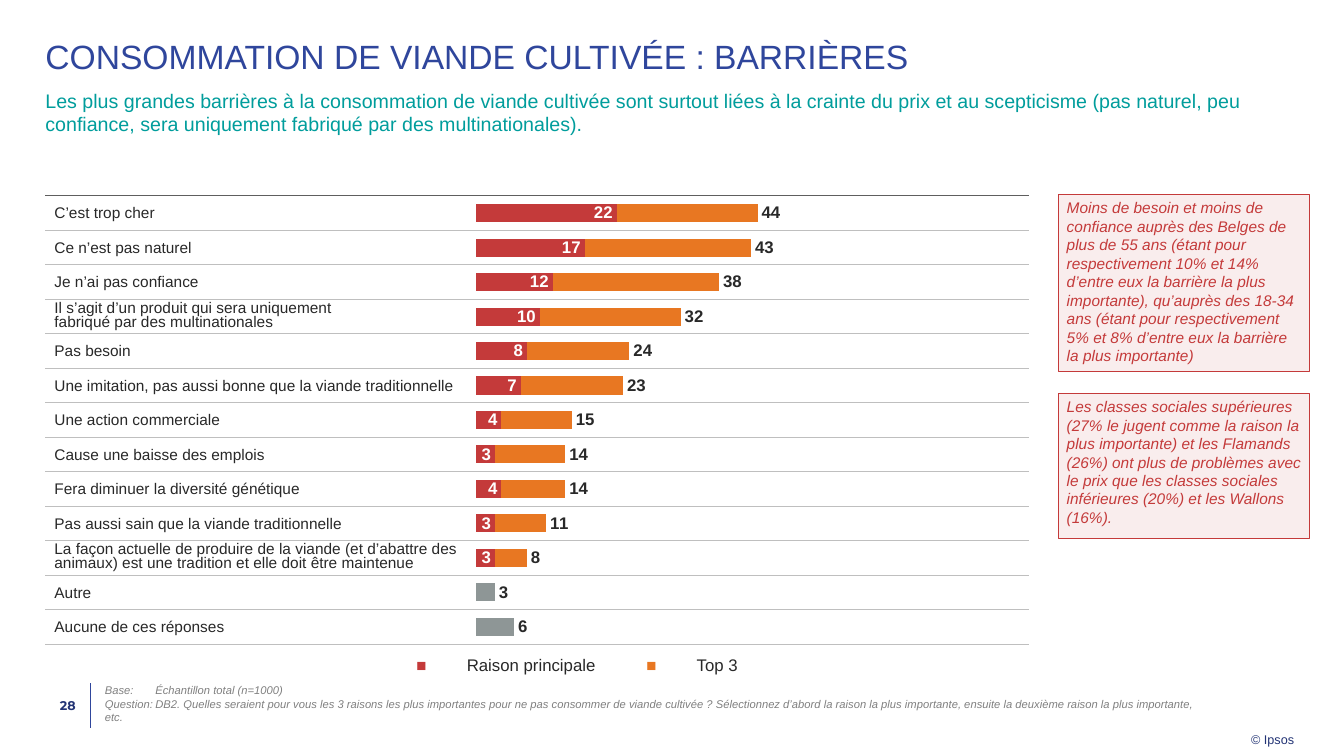
"""Build the slide on barriers to eating cultured meat."""
from dataclasses import dataclass
from typing import NamedTuple, Optional

from pptx import Presentation, util as u
from pptx.chart.data import CategoryChartData
from pptx.dml.color import RGBColor
from pptx.enum import chart as ch, shapes, text
from pptx.oxml import parse_xml
from pptx.oxml.ns import nsdecls
from pptx.oxml.xmlchemy import OxmlElement


@dataclass(frozen=True)
class Theme:
    font: str = "Arial"
    number_font: str = "Montserrat"
    blue: str = "2F469C"
    navy: str = "233475"
    teal: str = "009D9C"
    red: str = "C43A3A"
    pink: str = "F9EDED"
    orange: str = "E87722"
    ink: str = "282828"
    note_grey: str = "808080"
    bar_grey: str = "8E9696"
    rule: str = "BFBFBF"
    top_rule: str = "5E5E5E"
    white: str = "FFFFFF"
    title: float = 24
    lead: float = 14
    label: float = 12
    body: float = 11
    small: float = 9
    note: float = 8


class Box(NamedTuple):
    left: float
    top: float
    width: float
    height: float

    def emu(self) -> list:
        return [u.Inches(v) for v in self]


class Barrier(NamedTuple):
    label: str
    top3: int
    main: Optional[int] = None


class Callout(NamedTuple):
    box: Box
    text: str


class Key(NamedTuple):
    label: str
    color: str
    width: float


T = Theme()
CHART_BOX = Box(4.66, 1.94, 6.57, 4.45)
TABLE_BOX = Box(0.45, 1.94, 9.76, 4.45)
LEGEND_BOX = Box(4.09, 6.5, 3.42, 0.21)
BARRIERS = [
    Barrier("C’est trop cher", 44, 22),
    Barrier("Ce n’est pas naturel", 43, 17),
    Barrier("Je n’ai pas confiance", 38, 12),
    Barrier("Il s’agit d’un produit qui sera uniquement\nfabriqué par des multinationales", 32, 10),
    Barrier("Pas besoin", 24, 8),
    Barrier("Une imitation, pas aussi bonne que la viande traditionnelle", 23, 7),
    Barrier("Une action commerciale", 15, 4),
    Barrier("Cause une baisse des emplois", 14, 3),
    Barrier("Fera diminuer la diversité génétique", 14, 4),
    Barrier("Pas aussi sain que la viande traditionnelle", 11, 3),
    Barrier("La façon actuelle de produire de la viande (et d’abattre des animaux) "
            "est une tradition et elle doit être maintenue", 8, 3),
    Barrier("Autre", 3),
    Barrier("Aucune de ces réponses", 6),
]
CALLOUTS = [
    Callout(Box(10.5, 1.93, 2.49, 1.75),
            "Moins de besoin et moins de confiance auprès des Belges de plus de 55 ans (étant pour "
            "respectivement 10% et 14% d’entre eux la barrière la plus importante), qu’auprès des "
            "18-34 ans (étant pour respectivement 5% et 8% d’entre eux la barrière la plus importante)"),
    Callout(Box(10.5, 3.9, 2.49, 1.44),
            "Les classes sociales supérieures (27% le jugent comme la raison la plus importante) et les "
            "Flamands (26%) ont plus de problèmes avec le prix que les classes sociales inférieures "
            "(20%) et les Wallons (16%)."),
]
KEYS = [Key("Raison principale", T.red, 2.28), Key("Top 3", T.orange, 1.14)]


def rgb(color: str) -> RGBColor:
    return RGBColor.from_string(color)


def style(font, size: float, color: str, bold=False, italic=False, name=T.font) -> None:
    font.size, font.name, font.bold, font.italic = u.Pt(size), name, bold, italic
    font.color.rgb = rgb(color)


def write(tf, content: str, *, size: float, color: str, bold=False, italic=False, name=T.font,
          align=text.PP_ALIGN.LEFT, spacing=None, tab: float = 0, marker: str = "") -> None:
    for i, line in enumerate(content.split("\n")):
        p = tf.add_paragraph() if i else tf.paragraphs[0]
        pPr = p._p.get_or_add_pPr()
        pPr.set("marL", "0")
        pPr.set("indent", "0")
        pPr.append(OxmlElement("a:buNone"))
        if tab:
            pPr.append(parse_xml(f'<a:tabLst {nsdecls("a")}><a:tab pos="{u.Inches(tab)}" algn="l"/></a:tabLst>'))
        p.alignment, p.space_before = align, u.Pt(0)
        if spacing:
            p.line_spacing = spacing
        runs = [("■", marker), ("\t" + line, color)] if marker else [(line, color)]
        for words, tint in runs:
            r = p.add_run()
            r.text = words
            style(r.font, size, tint, bold, italic, name)


def frame(sp, margins: tuple, anchor=text.MSO_ANCHOR.TOP, wrap=True):
    tf = sp.text_frame
    tf.auto_size, tf.word_wrap, tf.vertical_anchor = text.MSO_AUTO_SIZE.NONE, wrap, anchor
    tf.margin_left, tf.margin_top, tf.margin_right, tf.margin_bottom = [u.Inches(m) for m in margins]
    return tf


def place(sp, box: Box):
    sp.left, sp.top, sp.width, sp.height = box.emu()
    return sp


def format_cell(cell, margins: tuple, top: Optional[tuple] = None, bottom: Optional[tuple] = None) -> None:
    cell.margin_left, cell.margin_top, cell.margin_right, cell.margin_bottom = [u.Inches(m) for m in margins]
    cell.vertical_anchor = text.MSO_ANCHOR.MIDDLE
    tcPr = cell._tc.get_or_add_tcPr()
    for side, edge in zip("LRTB", (None, None, top, bottom)):
        fill = f'<a:solidFill><a:srgbClr val="{edge[0]}"/></a:solidFill>' if edge else "<a:noFill/>"
        width = u.Pt(edge[1]) if edge else 0
        tcPr.append(parse_xml(f'<a:ln{side} {nsdecls("a")} w="{width}">{fill}</a:ln{side}>'))
    cell.fill.background()


def add_table(s, rows: int, widths: list, box: Box):
    tbl = s.shapes.add_table(rows, len(widths), *box.emu()).table
    tbl.first_row = tbl.horz_banding = False
    for col, width in zip(tbl.columns, widths):
        col.width = u.Inches(width)
    for row in tbl.rows:
        row.height = u.Inches(box.height / rows)
    return tbl


def add_barriers(s) -> None:
    tbl = add_table(s, len(BARRIERS), [4.29, 5.47], TABLE_BOX)
    thin = (T.rule, 0.25)
    for i, (row, barrier) in enumerate(zip(tbl.rows, BARRIERS)):
        for cell in row.cells:
            format_cell(cell, (0.09, 0.01, 0.01, 0), thin if i else (T.top_rule, 1), thin)
        tight = u.Pt(10) if len(barrier.label) > 60 else None
        write(row.cells[0].text_frame, barrier.label, size=T.body, color=T.ink, spacing=tight)


def add_legend(s) -> None:
    tbl = add_table(s, 1, [k.width for k in KEYS], LEGEND_BOX)
    for cell, key in zip(tbl.rows[0].cells, KEYS):
        format_cell(cell, (0.04, 0, 0.04, 0))
        write(cell.text_frame, key.label, size=T.label, color=T.ink, tab=0.19, marker=key.color)


def add_bars(s) -> None:
    data = CategoryChartData(number_format="0")
    data.categories = [str(i + 1) for i in range(len(BARRIERS))]
    data.add_series("Top 3", [b.top3 for b in BARRIERS])
    data.add_series("Raison principale", [b.main for b in BARRIERS])
    chart = s.shapes.add_chart(ch.XL_CHART_TYPE.BAR_CLUSTERED, *CHART_BOX.emu(), data).chart
    chart.has_legend = chart.has_title = False
    style(chart.font, T.label, T.ink)
    for axis in (chart.category_axis, chart.value_axis):
        axis.has_major_gridlines = False
        axis.major_tick_mark = axis.minor_tick_mark = ch.XL_TICK_MARK.NONE
        axis.tick_label_position = ch.XL_TICK_LABEL_POSITION.NONE
        axis.format.line.fill.background()
    chart.category_axis.reverse_order = True
    chart.value_axis.minimum_scale, chart.value_axis.maximum_scale = 0, 100
    plot = chart.plots[0]
    plot.gap_width, plot.overlap, plot.vary_by_categories = 90, 100, False
    looks = [(T.orange, T.ink, ch.XL_LABEL_POSITION.OUTSIDE_END, "0"),
             (T.red, T.white, ch.XL_LABEL_POSITION.INSIDE_END, "0;0;")]
    for series, (fill, ink, position, number_format) in zip(plot.series, looks):
        series.format.fill.solid()
        series.format.fill.fore_color.rgb = rgb(fill)
        labels = series.data_labels
        labels.show_value, labels.position = True, position
        labels.number_format, labels.number_format_is_linked = number_format, False
        style(labels.font, T.label, ink, bold=True)
    for i, barrier in enumerate(BARRIERS):
        if barrier.main is None:
            fill = plot.series[0].points[i].format.fill
            fill.solid()
            fill.fore_color.rgb = rgb(T.bar_grey)
    area = chart._chartSpace.chart.plotArea
    for old in area.findall("{*}layout"):
        area.remove(old)
    spots = "".join(f'<c:{k} val="{v}"/>' for k, v in [
        ("layoutTarget", "inner"), ("xMode", "edge"), ("yMode", "edge"),
        ("x", 0.009), ("y", 0.001), ("w", 0.967), ("h", 0.999)])
    area.insert(0, parse_xml(f'<c:layout {nsdecls("c")}><c:manualLayout>{spots}</c:manualLayout></c:layout>'))


def add_callout(s, callout: Callout) -> None:
    sp = s.shapes.add_shape(shapes.MSO_SHAPE.RECTANGLE, *callout.box.emu())
    sp.shadow.inherit = False
    sp.fill.solid()
    sp.fill.fore_color.rgb = rgb(T.pink)
    sp.line.color.rgb, sp.line.width = rgb(T.red), u.Pt(0.5)
    write(frame(sp, (0.08, 0.04, 0.08, 0.04)), callout.text, size=T.body, color=T.red, italic=True)


def add_footer(s) -> None:
    sp = s.shapes.add_textbox(*Box(12.41, 7.22, 0.43, 0.19).emu())
    write(frame(sp, (0, 0.04, 0, 0), wrap=False), "© Ipsos", size=T.small, color=T.navy)
    sp = s.shapes.add_textbox(*Box(0.45, 6.78, 0.45, 0.43).emu())
    write(frame(sp, (0, 0, 0.15, 0), text.MSO_ANCHOR.MIDDLE), "28", size=T.small, color=T.navy,
          bold=True, name=T.number_font, align=text.PP_ALIGN.RIGHT)
    ends = [u.Inches(v) for v in (0.9, 6.78, 0.9, 7.22)]
    line = s.shapes.add_connector(shapes.MSO_CONNECTOR.STRAIGHT, *ends)
    line.line.color.rgb, line.line.width = rgb(T.blue), u.Pt(0.5)
    line._element.spPr.append(OxmlElement("a:effectLst"))


def main() -> None:
    prs = Presentation()
    prs.slide_width, prs.slide_height = u.Inches(13.33), u.Inches(7.5)
    s = prs.slides.add_slide(prs.slide_layouts[3])
    title, lead, note = [s.placeholders[i] for i in range(3)]
    write(frame(place(title, Box(0.45, 0.4, 12.44, 0.42)), (0, 0, 0, 0)),
          "CONSOMMATION DE VIANDE CULTIVÉE : BARRIÈRES", size=T.title, color=T.blue, spacing=0.9)
    write(frame(place(lead, Box(0.45, 0.84, 12.44, 0.79)), (0, 0.04, 0, 0)),
          "Les plus grandes barrières à la consommation de viande cultivée sont surtout liées à la crainte "
          "du prix et au scepticisme (pas naturel, peu confiance, sera uniquement fabriqué par des "
          "multinationales).", size=T.lead, color=T.teal)
    write(frame(place(note, Box(1.04, 6.78, 11.02, 0.4)), (0, 0, 0, 0)),
          "Base:\tÉchantillon total (n=1000)\nQuestion:\tDB2. Quelles seraient pour vous les 3 raisons les "
          "plus importantes pour ne pas consommer de viande cultivée ? Sélectionnez d’abord la raison la "
          "plus importante, ensuite la deuxième raison la plus importante, etc.",
          size=T.note, color=T.note_grey, italic=True, tab=0.59)
    add_footer(s)
    add_barriers(s)
    for callout in CALLOUTS:
        add_callout(s, callout)
    add_bars(s)
    add_legend(s)
    prs.save("out.pptx")


if __name__ == "__main__":
    main()
